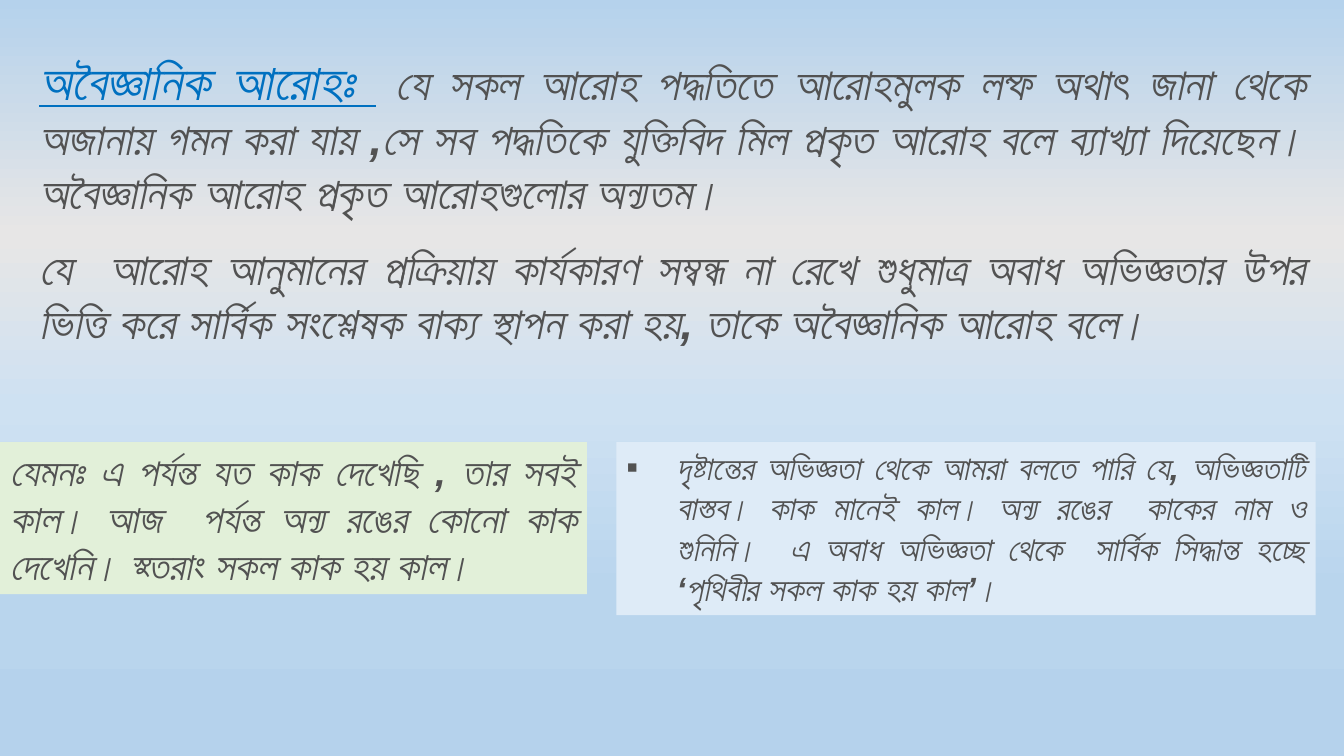
"""Build the Bengali slide on unscientific induction."""
from dataclasses import dataclass
from typing import Optional

from lxml.etree import SubElement
from pptx import Presentation
from pptx.dml.color import RGBColor
from pptx.enum.shapes import MSO_SHAPE as SHAPE
from pptx.enum.text import MSO_ANCHOR as ANCHOR, MSO_AUTO_SIZE as AUTO, PP_ALIGN as ALIGN
from pptx.oxml.ns import qn
from pptx.util import Pt

PX = 9525
FONT = "Arial"
COLORS = {
    "sky": "B5D2EC", "grey": "E7E6E6", "pale": "CEE1F2", "mist": "B9D5ED",
    "heading": "0070C0", "text": "525252", "green": "E2F0D9", "blue": "DEEBF7",
}
GRADIENT = [(0, "sky"), (31, "grey"), (54, "pale"), (78, "mist"), (99, "sky")]


@dataclass
class Span:
    text: str
    size: int
    color: str = "text"
    underline: bool = False


@dataclass
class Box:
    x: int
    y: int
    w: int
    h: int
    spans: list[Span]
    fill: Optional[str] = None
    bullet: Optional[str] = None


BOXES = [
    Box(28, 43, 1225, 171, [
        Span("অবৈজ্ঞানিক আরোহঃ ", 36, "heading", True),
        Span(" যে সকল আরোহ পদ্ধতিতে আরোহমুলক লম্ফ অথাৎ জানা থেকে অজানায় গমন করা যায় ,"
             "সে সব পদ্ধতিকে যুক্তিবিদ মিল প্রকৃত আরোহ বলে ব্যাখ্যা দিয়েছেন। "
             "অবৈজ্ঞানিক আরোহ প্রকৃত আরোহগুলোর অন্যতম।", 32)]),
    Box(28, 225, 1225, 113, [
        Span("যে  আরোহ আনুমানের প্রক্রিয়ায় কার্যকারণ সম্বন্ধ না রেখে শুধুমাত্র অবাধ "
             "অভিজ্ঞতার উপর ভিত্তি করে সার্বিক সংশ্লেষক বাক্য স্থাপন করা হয়, "
             "তাকে অবৈজ্ঞানিক আরোহ বলে।", 32)]),
    Box(0, 421, 559, 145, [
        Span("যেমনঃ এ পর্যন্ত যত কাক দেখেছি , তার সবই কাল। আজ  পর্যন্ত অন্য রঙের "
             "কোনো কাক দেখেনি। সুতরাং সকল কাক হয় কাল।", 28)], "green"),
    Box(587, 421, 666, 165, [
        Span("দৃষ্টান্তের অভিজ্ঞতা থেকে আমরা বলতে পারি যে, অভিজ্ঞতাটি বাস্তব। "
             "কাক মানেই কাল। অন্য রঙের  কাকের নাম ও শুনিনি।  এ অবাধ অভিজ্ঞতা থেকে  "
             "সার্বিক সিদ্ধান্ত হচ্ছে ‘পৃথিবীর সকল কাক হয় কাল’। ", 24)], "blue", "▪"),
]


def rgb(name: str) -> RGBColor:
    return RGBColor.from_string(COLORS[name])


def paint_background(s) -> None:
    fill = s.background.fill
    fill.gradient()
    fill.gradient_angle = 270
    stops = next(s.element.iter(qn("a:gsLst")))
    for stop in list(stops):
        stops.remove(stop)
    for percent, name in GRADIENT:
        stop = SubElement(stops, qn("a:gs"), pos=str(percent * 1000))
        SubElement(stop, qn("a:srgbClr"), val=COLORS[name])


def add_bullet(p, char: str, indent: int) -> None:
    pPr = p._p.get_or_add_pPr()
    pPr.set("marL", str(indent * PX))
    pPr.set("indent", str(-indent * PX))
    SubElement(pPr, qn("a:buFont"), typeface=FONT)
    SubElement(pPr, qn("a:buChar"), char=char)


def add_span(p, span: Span) -> None:
    r = p.add_run()
    r.text = span.text
    f = r.font
    f.name, f.size, f.bold, f.italic = FONT, Pt(span.size), True, True
    f.underline = span.underline
    f.color.rgb = rgb(span.color)
    SubElement(r._r.get_or_add_rPr(), qn("a:cs"), typeface=FONT)


def add_box(s, box: Box) -> None:
    place = [v * PX for v in (box.x, box.y, box.w, box.h)]
    if box.fill:
        sp = s.shapes.add_shape(SHAPE.RECTANGLE, *place)
        sp.shadow.inherit = False
        sp.fill.solid()
        sp.fill.fore_color.rgb = rgb(box.fill)
        sp.line.fill.background()
    else:
        sp = s.shapes.add_textbox(*place)
    tf = sp.text_frame
    tf.word_wrap = True
    tf.auto_size = AUTO.SHAPE_TO_FIT_TEXT
    tf.vertical_anchor = ANCHOR.TOP
    p = tf.paragraphs[0]
    p.alignment = ALIGN.JUSTIFY
    if box.bullet:
        add_bullet(p, box.bullet, 48)
    for span in box.spans:
        add_span(p, span)


def main() -> None:
    prs = Presentation()
    prs.slide_width, prs.slide_height = 1280 * PX, 720 * PX
    s = prs.slides.add_slide(prs.slide_layouts[6])
    paint_background(s)
    for box in BOXES:
        add_box(s, box)
    prs.save("out.pptx")


if __name__ == "__main__":
    main()
